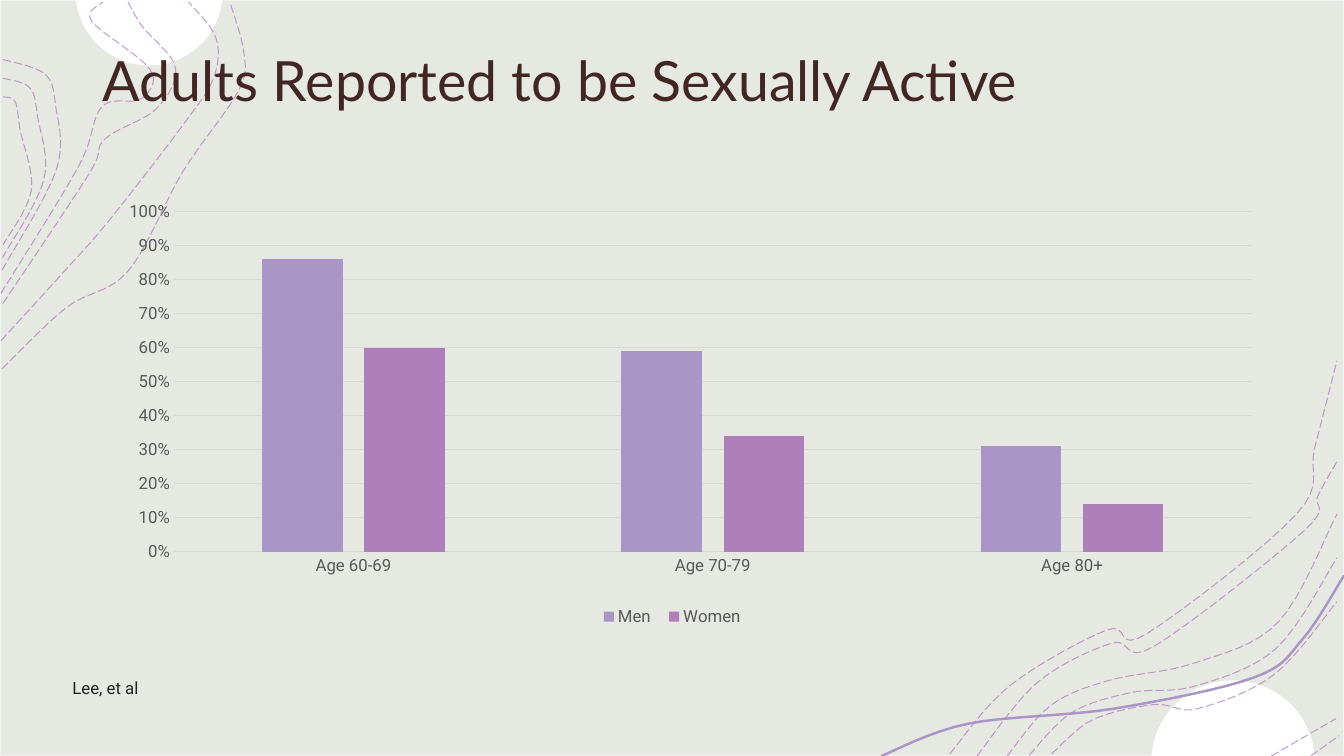
import math
from lxml import etree
from pptx import Presentation, util as u
from pptx.chart import data
from pptx.dml.color import RGBColor
from pptx.enum import chart as charts, dml, shapes, text
from pptx.oxml import ns

SAGE = RGBColor(0xE6, 0xE8, 0xE2)
WHITE = RGBColor(0xFF, 0xFF, 0xFF)
EDGE = RGBColor(0xF2, 0xF2, 0xF2)
LAVENDER = RGBColor(0xA9, 0x96, 0xC6)
ORCHID = RGBColor(0xAF, 0x7F, 0xBA)
MAROON = RGBColor(0x41, 0x26, 0x24)
INK = RGBColor(0x21, 0x21, 0x21)
GREY = RGBColor(0x59, 0x59, 0x59)
GRID = RGBColor(0xD9, 0xD9, 0xD9)
COLUMNS, ROWS = 1333, 750

CIRCLES = [(148, -8, 73), (1223, 756, 81)]
RIBBON = [(874, 750), (960, 718), (1105, 703), (1244, 672), (1292, 634), (1333, 571)]
CONTOUR_FAMILIES = [
    (2, [(2, 366), (66, 305), (127, 269), (181, 171), (236, 91), (242, 53), (228, 2)],
     [(1, 338), (64, 269), (108, 219), (183, 122), (212, 77), (214, 37), (187, 2)]),
    (2, [(3, 301), (88, 173), (104, 138), (155, 108), (174, 67), (141, 26), (127, 2)],
     [(1, 291), (78, 165), (101, 106), (140, 98), (149, 69), (91, 21), (102, 2)]),
    (3, [(3, 59), (44, 73), (55, 104), (56, 168), (2, 268)],
     [(3, 96), (15, 101), (20, 129), (31, 189), (3, 243)]),
    (2, [(942, 748), (1002, 680), (1098, 625), (1137, 629), (1286, 510), (1304, 444), (1326, 358)],
     [(969, 750), (1029, 677), (1103, 638), (1145, 641), (1294, 526), (1307, 492), (1326, 458)]),
    (3, [(999, 750), (1042, 700), (1100, 675), (1184, 658), (1268, 617), (1326, 510)],
     [(1043, 748), (1084, 714), (1145, 699), (1188, 703), (1264, 669), (1326, 597)]),
    (2, [(1261, 750), (1325, 713)], [(1300, 750), (1328, 730)]),
]


def smooth(points, steps=8):
    """Return a Catmull-Rom curve through the points."""
    padded = [points[0], *points, points[-1]]
    curve = [points[0]]
    for a, b, c, d in zip(padded, padded[1:], padded[2:], padded[3:]):
        for t in (step / steps for step in range(1, steps + 1)):
            curve.append(tuple(
                q + t * ((r - p) + t * ((2 * p - 5 * q + 4 * r - s) + t * (3 * q - p - 3 * r + s))) / 2
                for p, q, r, s in zip(a, b, c, d)))
    return curve


def blend(first, last, share):
    """Return the points lying a share of the way between two contours."""
    return [tuple(a + (b - a) * share for a, b in zip(start, end))
            for start, end in zip(first, last)]


class SlideBuilder:
    """Draws styled elements on a grid of equal columns and rows."""

    def __init__(self, presentation):
        self.unit = presentation.slide_width / COLUMNS
        self.slide = presentation.slides.add_slide(presentation.slide_layouts[5])
        self.shapes = self.slide.shapes

    def cells(self, *lengths):
        return [round(length * self.unit) for length in lengths]

    def backdrop(self):
        shape = self.shapes.add_shape(shapes.MSO_SHAPE.RECTANGLE, *self.cells(0, 0, COLUMNS, ROWS))
        shape.shadow.inherit = False
        shape.fill.solid()
        shape.fill.fore_color.rgb = SAGE
        shape.line.color.rgb = EDGE
        shape.line.width = u.Pt(1)

    def outline(self, points, close):
        start, *rest = [self.cells(*point) for point in points]
        builder = self.shapes.build_freeform(*start)
        builder.add_line_segments(rest, close=close)
        shape = builder.convert_to_shape()
        shape.shadow.inherit = False
        return shape

    def circle(self, x, y, radius):
        angles = [math.radians(degree) for degree in range(0, 360, 3)]
        shape = self.outline([(x + radius * math.cos(angle),
                               min(max(y + radius * math.sin(angle), 0), ROWS))
                              for angle in angles], True)
        shape.fill.solid()
        shape.fill.fore_color.rgb = WHITE
        shape.line.fill.background()

    def curve(self, points, color, width):
        shape = self.outline(smooth(points), False)
        shape.fill.background()
        shape.line.color.rgb = color
        shape.line.width = u.Pt(width)
        return shape

    def contours(self, count, first, last):
        for index in range(count):
            shape = self.curve(blend(first, last, index / (count - 1)), ORCHID, 0.75)
            shape.line.dash_style = dml.MSO_LINE.LONG_DASH
            color = shape.element.spPr.find(ns.qn("a:ln")).find(".//" + ns.qn("a:srgbClr"))
            etree.SubElement(color, ns.qn("a:alpha"), val="75000")

    def font(self, font, name, size, color):
        font.name, font.size, font.color.rgb = name, u.Pt(size), color

    def title(self, words, *box):
        title = self.shapes.title
        title.left, title.top, title.width, title.height = self.cells(*box)
        title.element.getparent().append(title.element)
        frame = title.text_frame
        frame.text = words
        frame.vertical_anchor = text.MSO_ANCHOR.TOP
        frame.margin_top = u.Inches(0.13)
        paragraph = frame.paragraphs[0]
        paragraph.alignment = text.PP_ALIGN.LEFT
        paragraph.line_spacing = 0.9
        self.font(paragraph.font, "Lato", 39.6, MAROON)

    def label(self, words, *box):
        frame = self.shapes.add_textbox(*self.cells(*box)).text_frame
        frame.word_wrap = True
        frame.text = words
        self.font(frame.paragraphs[0].font, "Roboto", 12, INK)

    def place(self, parent, position, inner, **shares):
        for old in parent.findall(ns.qn("c:layout")):
            parent.remove(old)
        layout = etree.Element(ns.qn("c:layout"))
        parent.insert(position, layout)
        manual = etree.SubElement(layout, ns.qn("c:manualLayout"))
        if inner:
            etree.SubElement(manual, ns.qn("c:layoutTarget"), val="inner")
        for axis in "xy":
            etree.SubElement(manual, ns.qn(f"c:{axis}Mode"), val="edge")
        for side, share in shares.items():
            etree.SubElement(manual, ns.qn(f"c:{side}"), val=str(share))

    def column_chart(self, categories, series, *box):
        chart_data = data.CategoryChartData(number_format="0%")
        chart_data.categories = categories
        for name, values, _ in series:
            chart_data.add_series(name, values)
        chart = self.shapes.add_chart(charts.XL_CHART_TYPE.COLUMN_CLUSTERED,
                                      *self.cells(*box), chart_data).chart
        chart.has_title = False
        self.font(chart.font, "Roboto", 12, GREY)
        plot = chart.plots[0]
        plot.gap_width, plot.overlap, plot.vary_by_categories = 219, -27, False
        for bars, (_, _, color) in zip(plot.series, series):
            bars.format.fill.solid()
            bars.format.fill.fore_color.rgb = color
        values = chart.value_axis
        values.minimum_scale, values.maximum_scale, values.major_unit = 0, 1, 0.1
        values.tick_labels.number_format = "0%"
        values.tick_labels.number_format_is_linked = False
        values.format.line.fill.background()
        for axis in (values, chart.category_axis):
            axis.major_tick_mark = charts.XL_TICK_MARK.NONE
        for line in (values.major_gridlines.format.line, chart.category_axis.format.line):
            line.color.rgb = GRID
            line.width = u.Pt(0.75)
        chart.has_legend = True
        chart.legend.position = charts.XL_LEGEND_POSITION.BOTTOM
        chart.legend.include_in_layout = False
        area, legend = (chart.element.find(".//" + ns.qn(tag)) for tag in ("c:plotArea", "c:legend"))
        self.place(area, 0, True, x=0.07, y=0.02, w=0.93, h=0.71)
        self.place(legend, 1, False, x=0.43, y=0.83, w=0.14, h=0.07)


def main():
    presentation = Presentation()
    presentation.slide_width, presentation.slide_height = u.Inches(13.33), u.Inches(7.5)
    builder = SlideBuilder(presentation)
    builder.backdrop()
    for circle in CIRCLES:
        builder.circle(*circle)
    builder.curve(RIBBON, LAVENDER, 1.75)
    for family in CONTOUR_FAMILIES:
        builder.contours(*family)
    builder.title("Adults Reported to be Sexually Active", 92, 40, 1150, 145)
    builder.column_chart(["Age 60-69", "Age 70-79", "Age 80+"],
                         [("Men", [0.86, 0.59, 0.31], LAVENDER),
                          ("Women", [0.6, 0.34, 0.14], ORCHID)], 92, 200, 1150, 476)
    builder.label("Lee, et al", 62, 667, 1180, 30)
    presentation.save("out.pptx")


if __name__ == "__main__":
    main()
